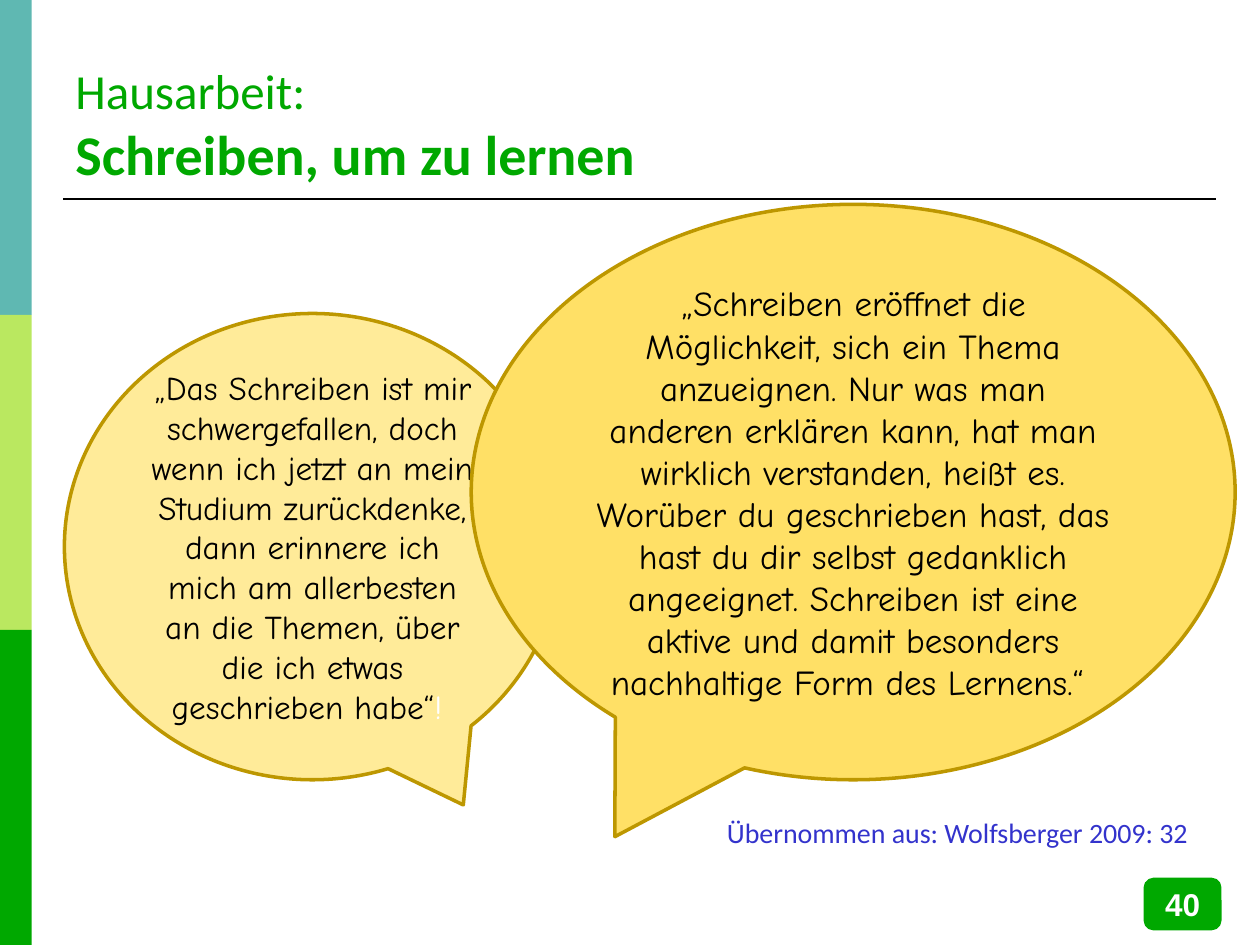
from lxml import etree
from pptx import Presentation
from pptx import util as u
from pptx.dml import color
from pptx.enum import shapes, text
from pptx.oxml import ns

COLORS = {
    "teal": "5FB8B2", "lime": "BAE860", "green": "00A800",
    "cream": "FFEB99", "yellow": "FFE066", "gold": "BD9700",
    "black": "000000", "white": "FFFFFF", "blue": "3333CC",
}
KIND = shapes.MSO_SHAPE


def rgb(name):
    return color.RGBColor.from_string(COLORS[name])


def style(font, name, size, col, bold=False):
    font.name = name
    font.size = u.Pt(size)
    font.bold = bold
    font.color.rgb = rgb(col)


def add_block(s, kind, box, fill, line=None):
    sp = s.shapes.add_shape(kind, *map(u.Cm, box))
    sp.shadow.inherit = False
    sp.fill.solid()
    sp.fill.fore_color.rgb = rgb(fill)
    if line:
        sp.line.color.rgb = rgb(line)
        sp.line.width = u.Pt(2)
    else:
        sp.line.fill.background()
    return sp


def add_text(s, box, anchor):
    tf = s.shapes.add_textbox(*map(u.Cm, box)).text_frame
    tf.word_wrap = True
    tf.vertical_anchor = anchor
    return tf


def add_sidebar(s, box):
    left, top, width, height = box
    bands = ("teal", "lime", "green")
    step = height / len(bands)
    for i, fill in enumerate(bands):
        add_block(s, KIND.RECTANGLE, (left, top + i * step, width, step), fill)


def add_header(s, box):
    left, top, width, height = box
    p = add_text(s, box, text.MSO_ANCHOR.BOTTOM).paragraphs[0]
    r = p.add_run()
    r.text = "Hausarbeit: "
    style(r.font, "Calibri", 28, "green")
    p.add_line_break()
    r = p.add_run()
    r.text = "Schreiben, um zu lernen"
    style(r.font, "Calibri", 32, "green", True)

    y = u.Cm(top + height + 0.12)
    rule = s.shapes.add_connector(
        shapes.MSO_CONNECTOR.STRAIGHT, u.Cm(left), y, u.Cm(left + width), y)
    rule.line.color.rgb = rgb("black")
    rule.line.width = u.Pt(1.5)
    etree.SubElement(rule._element.spPr, ns.qn("a:effectLst"))


def add_bubble(s, box, tail, fill, size, runs):
    sp = add_block(s, KIND.OVAL_CALLOUT, box, fill, "gold")
    sp.adjustments[0], sp.adjustments[1] = tail
    tf = sp.text_frame
    tf.word_wrap = True
    tf.vertical_anchor = text.MSO_ANCHOR.MIDDLE
    p = tf.paragraphs[0]
    p.alignment = text.PP_ALIGN.CENTER
    for words, col in runs:
        r = p.add_run()
        r.text = words
        style(r.font, "Comic Neue", size, col)


def add_credit(s, box):
    p = add_text(s, box, text.MSO_ANCHOR.TOP).paragraphs[0]
    p.text = "Übernommen aus: Wolfsberger 2009: 32 "
    p.alignment = text.PP_ALIGN.RIGHT
    style(p.font, "Calibri", 16, "blue")


def add_page_number(s, box):
    tf = add_block(s, KIND.ROUNDED_RECTANGLE, box, "green", "green").text_frame
    tf.margin_left = tf.margin_right = 0
    tf.vertical_anchor = text.MSO_ANCHOR.MIDDLE
    p = tf.paragraphs[0]
    p.text = "40"
    p.alignment = text.PP_ALIGN.CENTER
    style(p.font, "Arial", 18, "white", True)


def main():
    prs = Presentation()
    prs.slide_width, prs.slide_height = u.Cm(25.4), u.Cm(19.05)
    s = prs.slides.add_slide(prs.slide_layouts[6])
    add_sidebar(s, (0, 0, 0.64, 19.05))
    add_header(s, (1.27, 0.71, 23.24, 3.18))
    add_bubble(s, (1.3, 6.32, 10, 9.4), (0.304, 0.554), "cream", 19, [
        ("„Das Schreiben ist mir schwergefallen, doch wenn ich jetzt an mein "
         "Studium zurückdenke, dann erinnere ich mich am allerbesten an die "
         "Themen, über die ich etwas geschrieben habe“", "black"),
        ("! ", "white")])
    add_bubble(s, (9.5, 4.12, 15.4, 11.6), (-0.312, 0.599), "yellow", 20, [
        ("„Schreiben eröffnet die Möglichkeit, sich ein Thema anzueignen. "
         "Nur was man anderen erklären kann, hat man wirklich verstanden, "
         "heißt es. Worüber du geschrieben hast, das hast du dir selbst "
         "gedanklich angeeignet. Schreiben ist eine aktive und damit "
         "besonders nachhaltige Form des Lernens.“ ", "black")])
    add_credit(s, (12.93, 16.31, 11.4, 0.94))
    add_page_number(s, (23.09, 17.73, 1.5, 0.99))
    prs.save("out.pptx")


if __name__ == "__main__":
    main()
